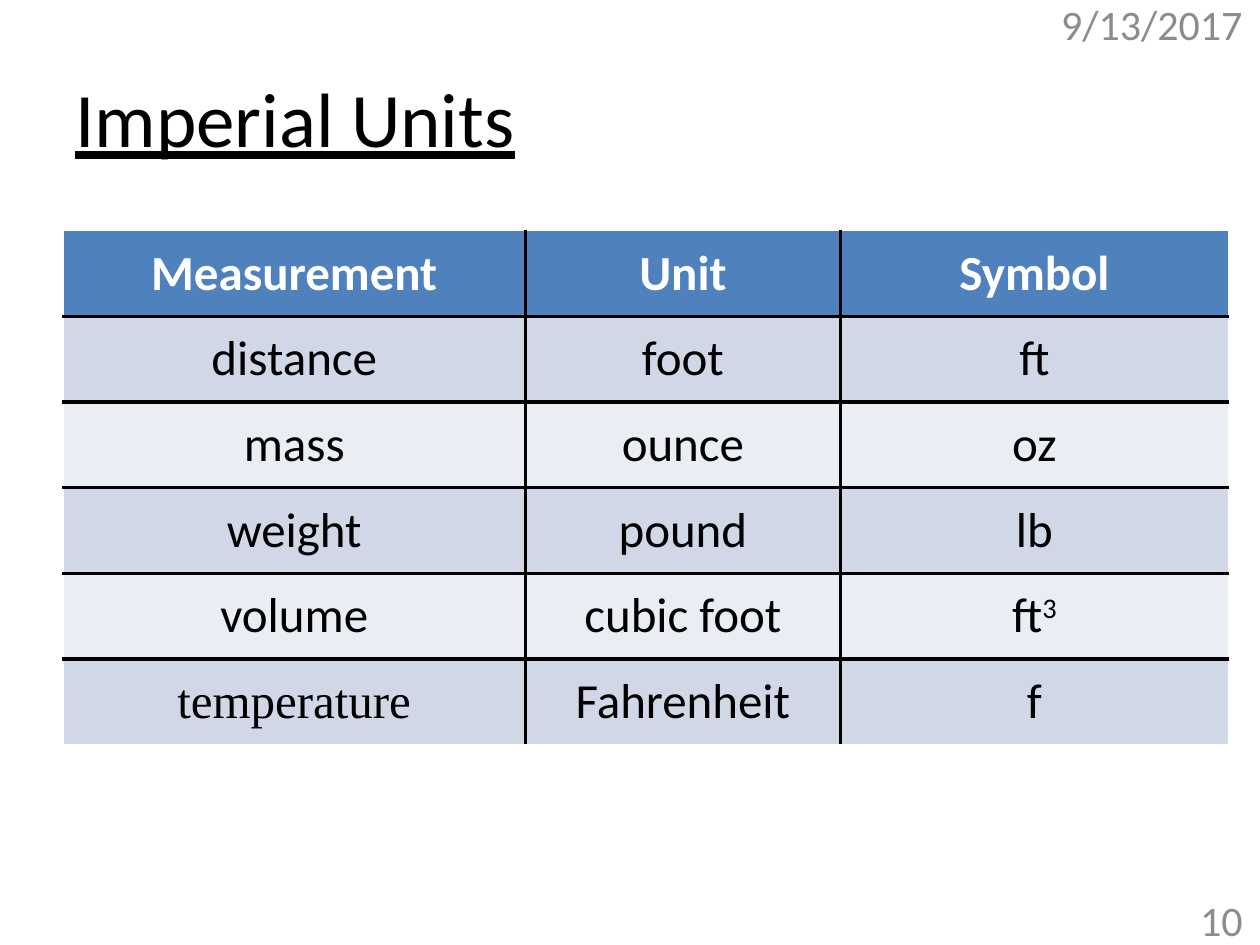
from lxml import etree
from pptx import Presentation
from pptx.dml.color import RGBColor
from pptx.enum.text import MSO_ANCHOR, PP_ALIGN
from pptx.oxml.ns import qn
from pptx.util import Inches, Pt

LEFT, CENTER, RIGHT = PP_ALIGN.LEFT, PP_ALIGN.CENTER, PP_ALIGN.RIGHT
MIDDLE = MSO_ANCHOR.MIDDLE

COLORS = {
    "ink": "000000", "paper": "FFFFFF", "muted": "8C8C8C",
    "header": "4F81BD", "odd": "D0D8E8", "even": "E9EDF4",
}
BODY_FONT, SERIF_FONT = "Calibri", "Times New Roman"
SERIF_WORDS = {"temperature"}
SUPERSCRIPTS = {"ft3": ("ft", "3")}

CAPTIONS = [
    ("Imperial Units", (0.5, 0.3, 9, 1.25), 44, "ink", LEFT, True),
    ("9/13/2017", (8.25, -0.01, 1.71, 0.4), 24, "muted", RIGHT, False),
    ("10", (9.29, 7.1, 0.67, 0.4), 24, "muted", RIGHT, False),
]
UNITS = [
    ("Measurement", "Unit", "Symbol"),
    ("distance", "foot", "ft"),
    ("mass", "ounce", "oz"),
    ("weight", "pound", "lb"),
    ("volume", "cubic foot", "ft3"),
    ("temperature", "Fahrenheit", "f"),
]
COLUMN_WIDTHS = (3.67, 2.5, 3.08)
ROW_HEIGHT = 0.68
GRID_LEFT, GRID_TOP = 0.5, 1.83
INNER_LINE, OUTER_LINE = ("ink", 2.25), ("paper", 1)


def rgb(name):
    return RGBColor.from_string(COLORS[name])


def style(run, size, color, font=BODY_FONT):
    run.font.size = Pt(size)
    run.font.name = font
    run.font.color.rgb = rgb(color)


def add_caption(slide, text, place, size, color, align, underlined):
    frame = slide.shapes.add_textbox(*map(Inches, place)).text_frame
    frame.word_wrap = True
    frame.vertical_anchor = MIDDLE
    frame.text = text
    paragraph = frame.paragraphs[0]
    paragraph.alignment = align
    style(paragraph.runs[0], size, color)
    paragraph.runs[0].font.underline = underlined


def set_borders(cell, row, column):
    on_edge = {
        "lnL": column == 0,
        "lnR": column == len(COLUMN_WIDTHS) - 1,
        "lnT": row == 0,
        "lnB": row == len(UNITS) - 1,
    }
    properties = cell._tc.get_or_add_tcPr()
    for position, (side, outer) in enumerate(on_edge.items()):
        color, width = OUTER_LINE if outer else INNER_LINE
        line = etree.Element(qn(f"a:{side}"), w=str(Pt(width)))
        fill = etree.SubElement(line, qn("a:solidFill"))
        etree.SubElement(fill, qn("a:srgbClr"), val=COLORS[color])
        properties.insert(position, line)


def fill_cell(cell, text, row, column):
    is_header = row == 0
    band = "header" if is_header else ("even", "odd")[row % 2]
    cell.fill.solid()
    cell.fill.fore_color.rgb = rgb(band)
    cell.vertical_anchor = MIDDLE
    paragraph = cell.text_frame.paragraphs[0]
    paragraph.alignment = CENTER
    font = SERIF_FONT if text in SERIF_WORDS else BODY_FONT
    for index, part in enumerate(SUPERSCRIPTS.get(text, (text,))):
        run = paragraph.add_run()
        run.text = part
        style(run, 28, "paper" if is_header else "ink", font)
        run.font.bold = is_header
        if index:
            run.font._element.set("baseline", "30000")
    set_borders(cell, row, column)


def add_units_table(slide):
    table = slide.shapes.add_table(
        len(UNITS), len(COLUMN_WIDTHS), Inches(GRID_LEFT), Inches(GRID_TOP),
        Inches(sum(COLUMN_WIDTHS)), Inches(ROW_HEIGHT * len(UNITS)),
    ).table
    for column, width in zip(table.columns, COLUMN_WIDTHS):
        column.width = Inches(width)
    for row, texts in enumerate(UNITS):
        table.rows[row].height = Inches(ROW_HEIGHT)
        for column, text in enumerate(texts):
            fill_cell(table.cell(row, column), text, row, column)


def main():
    deck = Presentation()
    deck.slide_width, deck.slide_height = Inches(10), Inches(7.5)
    slide = deck.slides.add_slide(deck.slide_layouts[6])
    for caption in CAPTIONS:
        add_caption(slide, *caption)
    add_units_table(slide)
    deck.save("out.pptx")


if __name__ == "__main__":
    main()
